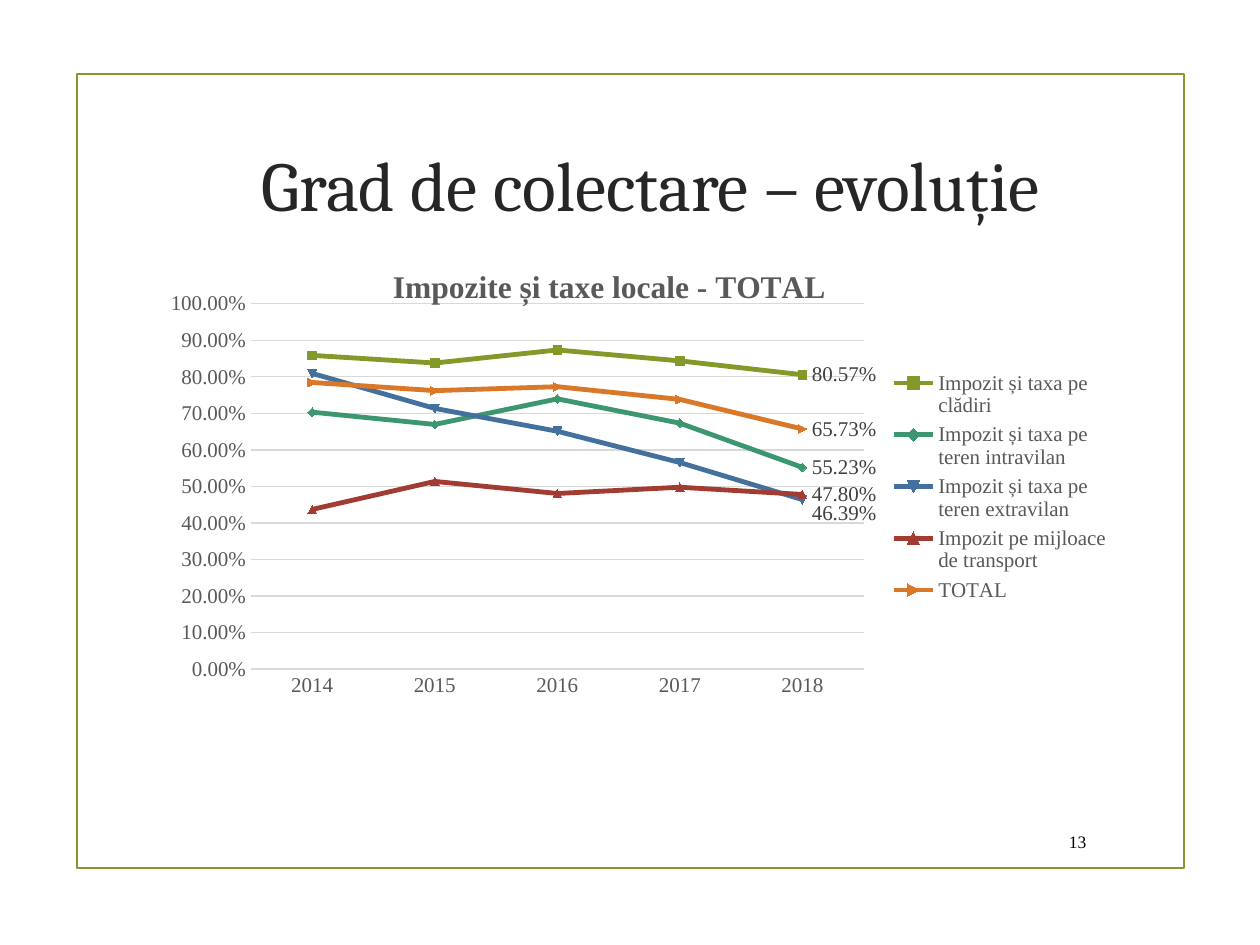
from lxml.etree import SubElement
from pptx import Presentation
from pptx.chart.data import CategoryChartData
from pptx.dml.color import RGBColor
from pptx.enum.chart import XL_CHART_TYPE as ChartType, XL_LABEL_POSITION as LabelPos
from pptx.enum.chart import XL_LEGEND_POSITION as LegendPos, XL_TICK_MARK as Tick
from pptx.enum.shapes import MSO_SHAPE as Shape
from pptx.enum.text import MSO_ANCHOR as Anchor, PP_ALIGN as Align
from pptx.oxml.ns import qn
from pptx.util import Inches, Pt

COLORS = {
    "frame": "83992A", "title": "262626", "black": "000000", "axis": "595959",
    "label": "404040", "grid": "D9D9D9", "buildings": "83992A", "urban": "3C9770",
    "rural": "44709D", "transport": "A23C33", "total": "D97828",
}
SERIF = "Times New Roman"
YEARS = ["2014", "2015", "2016", "2017", "2018"]
SERIES = [
    ("Impozit și taxa pe clădiri", "buildings", [0.8587, 0.8377, 0.8734, 0.8436, 0.8057]),
    ("Impozit și taxa pe teren intravilan", "urban", [0.7033, 0.6697, 0.7396, 0.6732, 0.5523]),
    ("Impozit și taxa pe teren extravilan", "rural", [0.8093, 0.7136, 0.6511, 0.5655, 0.4639]),
    ("Impozit pe mijloace de transport", "transport", [0.4372, 0.5137, 0.4807, 0.4978, 0.4780]),
    ("TOTAL", "total", [0.7846, 0.7622, 0.7730, 0.7382, 0.6573]),
]
LABEL_SHIFTS = {"rural": 0.03}


def rgb(name):
    """Return the named colour."""
    return RGBColor.from_string(COLORS[name])


def style_font(font, size, color, name=SERIF, bold=False):
    """Set the size, colour, face and weight of a font."""
    font.size, font.name, font.bold = Pt(size), name, bold
    font.color.rgb = rgb(color)


def style_line(line, color, width):
    """Set the colour and width of a line."""
    line.color.rgb = rgb(color)
    line.width = Pt(width)


def add_frame(s, x, y, w, h):
    """Add the outlined page frame."""
    sp = s.shapes.add_shape(Shape.RECTANGLE, Inches(x), Inches(y), Inches(w), Inches(h))
    sp.shadow.inherit = False
    sp.fill.background()
    style_line(sp.line, "frame", 1.25)


def add_text(s, text, x, y, w, h, align, **font):
    """Add a vertically centred line of text."""
    tf = s.shapes.add_textbox(Inches(x), Inches(y), Inches(w), Inches(h)).text_frame
    tf.word_wrap = True
    tf.vertical_anchor = Anchor.MIDDLE
    p = tf.paragraphs[0]
    p.alignment = align
    r = p.add_run()
    r.text = text
    style_font(r.font, **font)


def place(parent, after, **values):
    """Give a chart part a manual layout, put after the named child."""
    for old in parent.findall(qn("c:layout")):
        parent.remove(old)
    layout = SubElement(parent, qn("c:layout"))
    manual = SubElement(layout, qn("c:manualLayout"))
    for tag, value in values.items():
        SubElement(manual, qn(f"c:{tag}")).set("val", str(value))
    if after:
        parent.find(qn(f"c:{after}")).addnext(layout)
    else:
        parent.insert(0, layout)


def style_axis(axis):
    """Set the labels and tick marks of an axis."""
    style_font(axis.tick_labels.font, 12, "axis")
    axis.major_tick_mark = axis.minor_tick_mark = Tick.NONE


def style_series(series, color):
    """Colour a line and label its last point."""
    series.smooth = False
    series.marker.style = None
    style_line(series.format.line, color, 2.75)
    label = series.points[len(YEARS) - 1].data_label
    style_font(label.font, 12, "label")
    label.position = LabelPos.RIGHT
    if color in LABEL_SHIFTS:
        dlbl = series._element.find(".//" + qn("c:dLbl"))
        place(dlbl, "idx", x=0, y=LABEL_SHIFTS[color])


def add_line_chart(s, title, x, y, w, h):
    """Add the line chart of collection rates."""
    data = CategoryChartData(number_format="0.00%")
    data.categories = YEARS
    for name, _, values in SERIES:
        data.add_series(name, values)
    chart = s.shapes.add_chart(
        ChartType.LINE, Inches(x), Inches(y), Inches(w), Inches(h), data).chart
    style_font(chart.font, 10, "black")
    chart.plots[0].vary_by_categories = False

    r = chart.chart_title.text_frame.paragraphs[0].add_run()
    r.text = title
    style_font(r.font, 18, "axis", bold=True)
    chart.chart_title.include_in_layout = False
    place(chart.chart_title._element, "tx", xMode="edge", yMode="edge", x=0.24, y=0.05)

    style_axis(chart.category_axis)
    style_line(chart.category_axis.format.line, "grid", 1)
    axis = chart.value_axis
    style_axis(axis)
    axis.minimum_scale, axis.maximum_scale, axis.major_unit = 0, 1, 0.1
    axis.tick_labels.number_format = "0.00%"
    axis.tick_labels.number_format_is_linked = False
    axis.format.line.fill.background()
    style_line(axis.major_gridlines.format.line, "grid", 0.75)

    chart.has_legend = True
    chart.legend.position = LegendPos.RIGHT
    chart.legend.include_in_layout = False
    style_font(chart.legend.font, 12, "axis")
    place(chart.legend._element, "legendPos", xMode="edge", yMode="edge",
          x=0.75, y=0.27, w=0.24, h=0.52)
    plot_area = chart._chartSpace.find(".//" + qn("c:plotArea"))
    place(plot_area, None, layoutTarget="inner", xMode="edge", yMode="edge",
          x=0.1, y=0.14, w=0.63, h=0.78)
    for series, (_, color, _) in zip(chart.plots[0].series, SERIES):
        style_series(series, color)


def main():
    """Build and save the slide."""
    prs = Presentation()
    prs.slide_width, prs.slide_height = Inches(10), Inches(7.5)
    s = prs.slides.add_slide(prs.slide_layouts[6])
    add_frame(s, 0.61, 0.59, 8.79, 6.3)
    add_text(s, "Grad de colectare – evoluție", 0.83, 0.83, 8.67, 1.25, Align.CENTER,
             size=40, color="title", name="Cambria")
    add_text(s, "13", 8.29, 6.52, 0.43, 0.31, Align.RIGHT, size=10, color="black")
    add_line_chart(s, "Impozite și taxe locale - TOTAL", 1.22, 1.89, 7.72, 3.72)
    prs.save("out.pptx")


if __name__ == "__main__":
    main()
